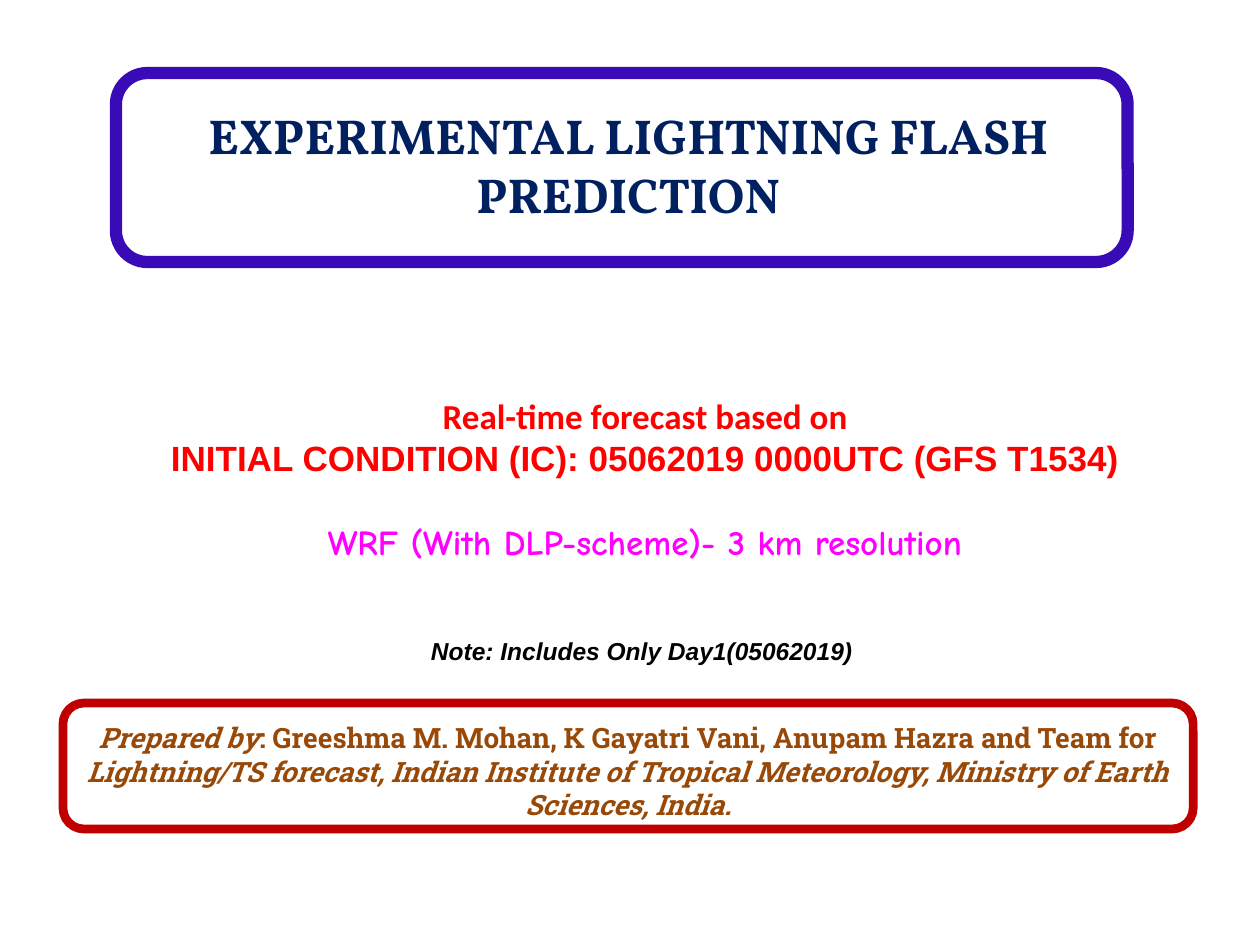
from pptx import Presentation
from pptx import util as u
from pptx.dml.color import RGBColor
from pptx.enum import shapes, text

COLS, ROWS = 100, 75


def color(value):
    return RGBColor.from_string(value)


def span(txt, **fmt):
    return txt, fmt


class Deck:
    """Builds a slide on a grid of COLS by ROWS cells."""

    def __init__(self, width=10, height=7.5):
        self.prs = Presentation()
        self.prs.slide_width = u.Inches(width)
        self.prs.slide_height = u.Inches(height)
        self.s = self.prs.slides.add_slide(self.prs.slide_layouts[6])

    def box(self, col, row, cols, rows):
        dx, dy = self.prs.slide_width / COLS, self.prs.slide_height / ROWS
        return [round(n) for n in (col * dx, row * dy, cols * dx, rows * dy)]

    def text(self, place, *paragraphs, gaps=(), size=20, font="Arial",
             ink="000000", italic=False):
        tf = self.s.shapes.add_textbox(*self.box(*place)).text_frame
        tf.word_wrap = True
        tf.auto_size = text.MSO_AUTO_SIZE.SHAPE_TO_FIT_TEXT
        for i, spans in enumerate(paragraphs):
            p = tf.paragraphs[0] if i == 0 else tf.add_paragraph()
            p.alignment = text.PP_ALIGN.CENTER
            if i in gaps:
                p.space_before = u.Pt(size * 1.2)
            for txt, fmt in spans:
                r = p.add_run()
                r.text = txt
                r.font.size = u.Pt(size)
                r.font.bold = True
                r.font.name = fmt.get("font", font)
                r.font.italic = fmt.get("italic", italic)
                r.font.color.rgb = color(fmt.get("ink", ink))

    def frame(self, place, ink, weight):
        sp = self.s.shapes.add_shape(
            shapes.MSO_SHAPE.ROUNDED_RECTANGLE, *self.box(*place))
        sp.shadow.inherit = False
        sp.fill.background()
        sp.line.color.rgb = color(ink)
        sp.line.width = u.Pt(weight)

    def save(self):
        self.prs.save("out.pptx")


def main():
    deck = Deck()
    deck.text(
        (5.8, 30.8, 90.8, 14.5),
        [span("Real-time forecast based on", font="Calibri")],
        [span("INITIAL CONDITION (IC): 05062019 0000UTC (GFS T1534)")],
        [span("WRF (With DLP-scheme)- 3 km resolution",
              font="Comic Neue", ink="FF00FF")],
        gaps=(2,), ink="FF0000")
    deck.text((5.3, 50, 91.3, 3.4),
              [span("Note: Includes Only Day1(05062019)")],
              size=14, italic=True)
    deck.text((9.3, 7.9, 81.1, 10.4),
              [span("EXPERIMENTAL LIGHTNING FLASH PREDICTION")],
              size=28, font="Vollkorn", ink="002060")
    deck.frame((9.2, 5.8, 80.3, 15), "380BB7", 7)
    deck.text(
        (4.2, 56.7, 91.3, 9.1),
        [span("Prepared by"),
         span(": Greeshma M. Mohan, K Gayatri Vani, Anupam Hazra and Team for ",
              italic=False),
         span("Lightning/TS forecast, Indian Institute of Tropical Meteorology, "
              "Ministry of Earth Sciences, India.")],
        size=16, font="Roboto Slab", ink="984807", italic=True)
    deck.frame((5, 55.8, 89.7, 10), "C00000", 5)
    deck.save()


if __name__ == "__main__":
    main()
